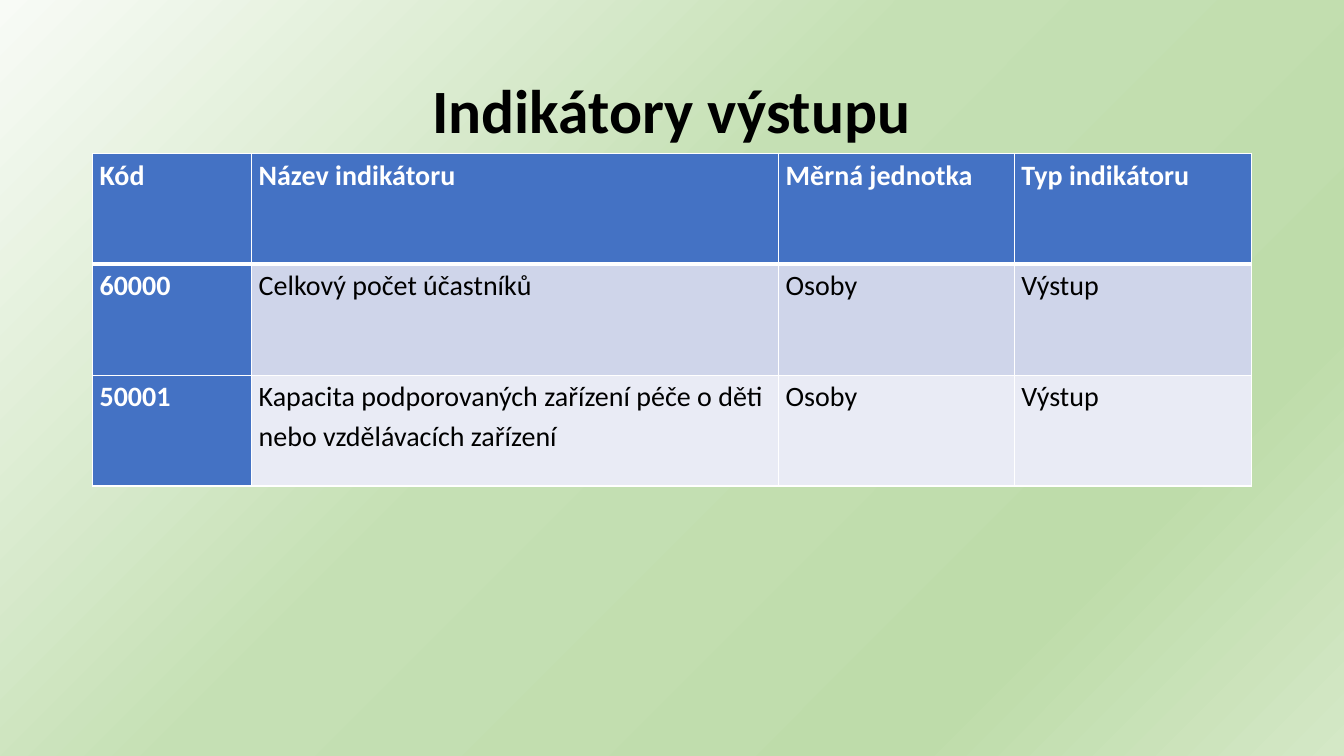
from copy import deepcopy

from lxml import etree
from pptx import Presentation
from pptx.dml.color import RGBColor
from pptx.enum import text
from pptx.oxml.ns import qn
from pptx.util import Cm, Pt

WHITE = RGBColor(0xFF, 0xFF, 0xFF)
BLACK = RGBColor(0, 0, 0)
BLUE = RGBColor(0x44, 0x72, 0xC4)
BANDS = [RGBColor(0xCF, 0xD5, 0xEA), RGBColor(0xE9, 0xEB, 0xF5)]
STOPS = [
    (0, RGBColor(0xF8, 0xFB, 0xF6)),
    (44, RGBColor(0xC5, 0xE0, 0xB4)),
    (79, RGBColor(0xBE, 0xDC, 0xAA)),
    (100, RGBColor(0xD4, 0xE8, 0xC6)),
]
FONT = "Calibri"
COLS = [4.01, 13.28, 5.94, 5.97]
ROWS = [
    ["Kód", "Název indikátoru", "Měrná jednotka", "Typ indikátoru"],
    ["60000", "Celkový počet účastníků", "Osoby", "Výstup"],
    ["50001", "Kapacita podporovaných zařízení péče o děti nebo vzdělávacích zařízení",
     "Osoby", "Výstup"],
]


def backdrop(slide):
    fill = slide.background.fill
    fill.gradient()
    fill.gradient_angle = 315
    stops = slide.element.find(".//" + qn("a:gsLst"))
    model = deepcopy(stops[0])
    for stop in list(stops):
        stops.remove(stop)
    for place, tint in STOPS:
        stop = deepcopy(model)
        stop.set("pos", str(place * 1000))
        for child in list(stop):
            stop.remove(child)
        etree.SubElement(stop, qn("a:srgbClr"), val=str(tint))
        stops.append(stop)


def write(par, words, size, color, bold):
    run = par.add_run()
    run.text = words
    font = run.font
    font.name, font.size, font.bold = FONT, Pt(size), bold
    font.color.rgb = color


def title(slide, left, top, width, height):
    frame = slide.shapes.add_textbox(Cm(left), Cm(top), Cm(width), Cm(height)).text_frame
    frame.word_wrap = True
    frame.vertical_anchor = text.MSO_ANCHOR.MIDDLE
    par = frame.paragraphs[0]
    par.alignment = text.PP_ALIGN.CENTER
    par.line_spacing = 0.9
    write(par, "Indikátory výstupu", 44, BLACK, True)


def border(cell, side, width):
    line = etree.SubElement(cell._tc.get_or_add_tcPr(), qn("a:ln" + side), w=str(Pt(width)))
    solid = etree.SubElement(line, qn("a:solidFill"))
    etree.SubElement(solid, qn("a:srgbClr"), val=str(WHITE))


def entry(cell, words, row, head):
    """Fill one cell; the line below the top row is thicker."""
    cell.margin_left = cell.margin_right = Cm(0.18)
    cell.margin_top = cell.margin_bottom = 0
    for side in "LRTB":
        thick = (row, side) in [(0, "B"), (1, "T")]
        border(cell, side, 3 if thick else 1)
    cell.fill.solid()
    cell.fill.fore_color.rgb = BLUE if head else BANDS[row - 1]
    par = cell.text_frame.paragraphs[0]
    par.line_spacing = 1.15
    par.space_after = Pt(6)
    write(par, words, 20, WHITE if head else BLACK, head)


def table(slide, left, top, width, height):
    grid = slide.shapes.add_table(
        len(ROWS), len(COLS), Cm(left), Cm(top), Cm(width), Cm(height)).table
    grid.first_col = True
    for col, wide in zip(grid.columns, COLS):
        col.width = Cm(wide)
    for r, row in enumerate(ROWS):
        for c, words in enumerate(row):
            entry(grid.cell(r, c), words, r, r == 0 or c == 0)


def main():
    deck = Presentation()
    deck.slide_width, deck.slide_height = Cm(33.87), Cm(19.05)
    slide = deck.slides.add_slide(deck.slide_layouts[6])
    backdrop(slide)
    title(slide, 2.33, 1.01, 29.2, 3.68)
    table(slide, 2.33, 3.86, 29.2, 8.39)
    deck.save("out.pptx")


if __name__ == "__main__":
    main()
